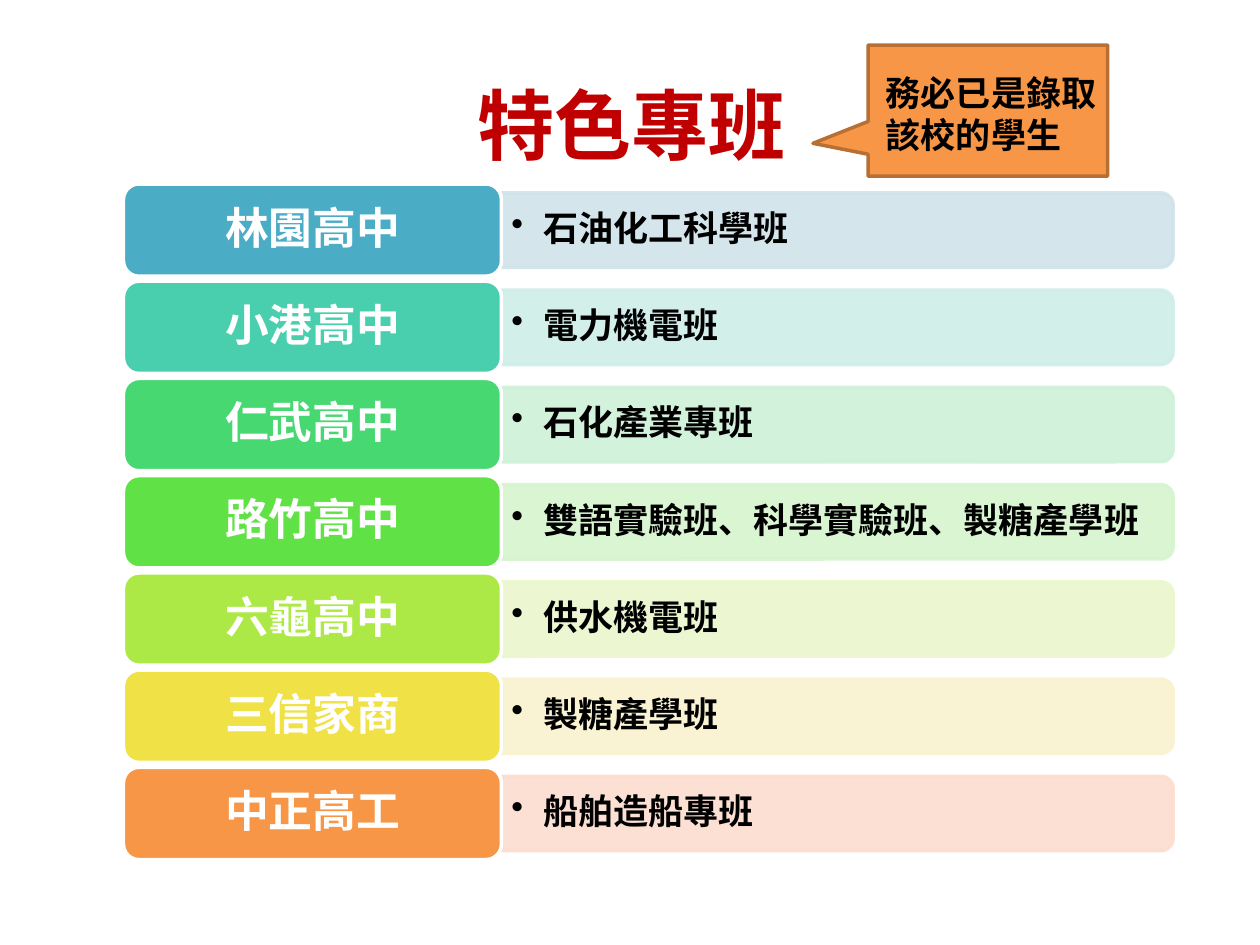
from lxml import etree
from pptx import Presentation
from pptx.dml.color import RGBColor
from pptx.enum.shapes import MSO_SHAPE
from pptx.enum.text import MSO_ANCHOR, PP_ALIGN
from pptx.oxml.ns import qn
from pptx.util import Cm, Pt

CALLOUT = MSO_SHAPE.RECTANGULAR_CALLOUT
LABEL = MSO_SHAPE.ROUNDED_RECTANGLE
BAR = MSO_SHAPE.ROUND_2_SAME_RECTANGLE
MIDDLE = MSO_ANCHOR.MIDDLE
LEFT, CENTER = PP_ALIGN.LEFT, PP_ALIGN.CENTER

COLORS = {
    "title": "C00000",
    "black": "000000",
    "white": "FFFFFF",
    "callout": "F79646",
    "callout_line": "B76F34",
}
CJK_FONT = "Noto Sans CJK SC"
TITLE_FORMAT = {"name": "Calibri", "size": Pt(44), "bold": True}
LABEL_FORMAT = {"name": CJK_FONT, "size": Pt(25), "bold": True}
BODY_FORMAT = {"name": CJK_FONT, "size": Pt(20), "bold": True}

# School, special class, label colour, bar colour
ROWS = [
    ("林園高中", "石油化工科學班", "4BACC6", "D0E3EA"),
    ("小港高中", "電力機電班", "49CFAE", "CFEEE8"),
    ("仁武高中", "石化產業專班", "47D872", "CFF1D9"),
    ("路竹高中", "雙語實驗班、科學實驗班、製糖產學班", "60E146", "D6F4CE"),
    ("六龜高中", "供水機電班", "ACE946", "EBF7CE"),
    ("三信家商", "製糖產學班", "F0E146", "F9F1CF"),
    ("中正高工", "船舶造船專班", "F79646", "FCDDCF"),
]
LABEL_LEFT, FIRST_TOP = 2.49, 3.71
LABEL_WIDTH, LABEL_HEIGHT = 7.62, 1.86
ROW_PITCH = 1.96
BAR_LEFT = LABEL_LEFT + LABEL_WIDTH
BAR_LENGTH, BAR_THICKNESS = 13.54, 1.5


def write_text(shape, text, color, font_format, align, margins=(0.25, 0.13, 0.25, 0.13)):
    """Fill the shape with one paragraph; margins are left, top, right, bottom in cm."""
    frame = shape.text_frame
    frame.word_wrap = True
    frame.vertical_anchor = MIDDLE
    for side, margin in zip(("left", "top", "right", "bottom"), margins):
        setattr(frame, f"margin_{side}", Cm(margin))
    paragraph = frame.paragraphs[0]
    paragraph.alignment = align
    run = paragraph.add_run()
    run.text = text
    for name, value in font_format.items():
        setattr(run.font, name, value)
    run.font.color.rgb = RGBColor.from_string(color)
    if font_format["name"] == CJK_FONT:
        east_asian = etree.SubElement(run.font._element, qn("a:ea"))
        east_asian.set("typeface", CJK_FONT)
    return paragraph


def add_box(slide, kind, left, top, width, height, fill, line):
    shape = slide.shapes.add_shape(kind, Cm(left), Cm(top), Cm(width), Cm(height))
    shape.shadow.inherit = False
    shape.fill.solid()
    shape.fill.fore_color.rgb = RGBColor.from_string(fill)
    shape.line.color.rgb = RGBColor.from_string(line)
    shape.line.width = Pt(2)
    return shape


def set_opacity(shape, percent):
    for color in shape._element.spPr.iter(qn("a:srgbClr")):
        etree.SubElement(color, qn("a:alpha")).set("val", str(percent * 1000))


def add_bullet(paragraph, indent):
    properties = paragraph._p.get_or_add_pPr()
    properties.set("marL", str(Cm(indent)))
    properties.set("indent", str(-Cm(indent)))
    etree.SubElement(properties, qn("a:buChar")).set("char", "•")


def add_title(slide):
    title = slide.shapes.title
    title.left, title.top = Cm(1.3), Cm(0.91)
    title.width, title.height = Cm(22.86), Cm(3.18)
    write_text(title, "特色專班", COLORS["title"], TITLE_FORMAT, CENTER)


def add_bar(slide, center_y, text, color):
    """Add a bar rounded at its right end, which is an upright shape turned by 90 degrees."""
    center_x = BAR_LEFT + BAR_LENGTH / 2
    bar = add_box(slide, BAR, center_x - BAR_THICKNESS / 2, center_y - BAR_LENGTH / 2,
                  BAR_THICKNESS, BAR_LENGTH, color, color)
    bar.rotation = 90
    set_opacity(bar, 90)
    text_box = slide.shapes.add_textbox(Cm(BAR_LEFT), Cm(center_y - BAR_THICKNESS / 2),
                                        Cm(BAR_LENGTH), Cm(BAR_THICKNESS))
    paragraph = write_text(text_box, text, COLORS["black"], BODY_FORMAT, LEFT,
                           (0.2, 0.1, 0.2, 0.1))
    paragraph.line_spacing = 0.9
    add_bullet(paragraph, 0.64)


def add_label(slide, top, text, color):
    label = add_box(slide, LABEL, LABEL_LEFT, top, LABEL_WIDTH, LABEL_HEIGHT,
                    color, COLORS["white"])
    paragraph = write_text(label, text, COLORS["white"], LABEL_FORMAT, CENTER)
    paragraph.line_spacing = 0.9


def add_callout(slide):
    callout = add_box(slide, CALLOUT, 17.5, 0.91, 4.83, 2.64,
                      COLORS["callout"], COLORS["callout_line"])
    callout.adjustments[0] = -0.73
    callout.adjustments[1] = 0.25
    write_text(callout, "務必已是錄取該校的學生", COLORS["black"], BODY_FORMAT, LEFT,
               (0.36, 0.13, 0.2, 0))


def main():
    presentation = Presentation()
    presentation.slide_width, presentation.slide_height = Cm(25.4), Cm(19.05)
    slide = presentation.slides.add_slide(presentation.slide_layouts[5])
    add_title(slide)
    for index, (school, special_class, label_color, bar_color) in enumerate(ROWS):
        top = FIRST_TOP + index * ROW_PITCH
        add_bar(slide, top + LABEL_HEIGHT / 2, special_class, bar_color)
        add_label(slide, top, school, label_color)
    add_callout(slide)
    presentation.save("out.pptx")


if __name__ == "__main__":
    main()
